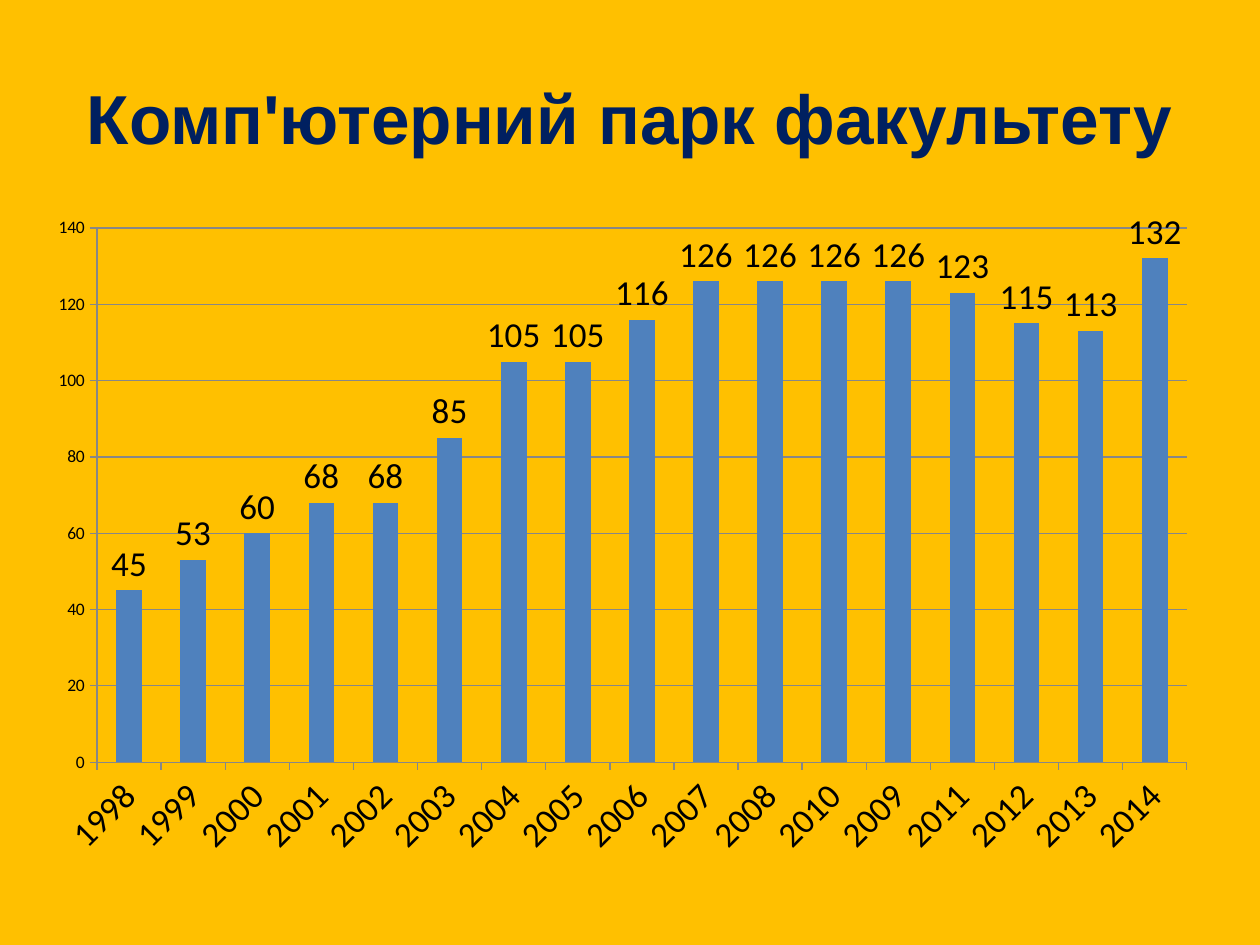
from typing import NamedTuple

from lxml import etree
from pptx import Presentation
from pptx.chart import data as chart_data
from pptx.dml.color import RGBColor
from pptx.enum import chart as chart_enum, text
from pptx.oxml import ns
from pptx.util import Inches, Pt

GOLD = RGBColor(0xFF, 0xC0, 0x00)
NAVY = RGBColor(0x00, 0x20, 0x60)
BLUE = RGBColor(0x4F, 0x81, 0xBD)
GRAY = RGBColor(0x87, 0x87, 0x87)
BLACK = RGBColor(0x00, 0x00, 0x00)


class Box(NamedTuple):
    left: int
    top: int
    width: int
    height: int


class YearCount(NamedTuple):
    year: str
    computers: int


TITLE_BOX = Box(Inches(0.5), Inches(0.3), Inches(9), Inches(1.25))
CHART_BOX = Box(Inches(0.28), Inches(1.62), Inches(9.33), Inches(5.28))
PLOT_BOX = Box(Inches(0.77), Inches(1.81), Inches(8.65), Inches(4.24))

COUNTS = [
    YearCount("1998", 45), YearCount("1999", 53), YearCount("2000", 60),
    YearCount("2001", 68), YearCount("2002", 68), YearCount("2003", 85),
    YearCount("2004", 105), YearCount("2005", 105), YearCount("2006", 116),
    YearCount("2007", 126), YearCount("2008", 126), YearCount("2010", 126),
    YearCount("2009", 126), YearCount("2011", 123), YearCount("2012", 115),
    YearCount("2013", 113), YearCount("2014", 132),
]


def add_title(slide, wording: str) -> None:
    frame = slide.shapes.add_textbox(*TITLE_BOX).text_frame
    frame.word_wrap = True
    frame.vertical_anchor = text.MSO_ANCHOR.MIDDLE
    paragraph = frame.paragraphs[0]
    paragraph.alignment = text.PP_ALIGN.CENTER
    run = paragraph.add_run()
    run.text = wording
    run.font.name = "Arial"
    run.font.size = Pt(39.6)
    run.font.bold = True
    run.font.color.rgb = NAVY


def set_plot_area(chart, outer: Box, inner: Box) -> None:
    """Place the inner plot area as fractions of the chart frame."""
    plot_area = chart.plots[0]._element.getparent()
    for old in plot_area.findall(ns.qn("c:layout")):
        plot_area.remove(old)
    layout = etree.Element(ns.qn("c:layout"))
    manual = etree.SubElement(layout, ns.qn("c:manualLayout"))
    settings = {
        "layoutTarget": "inner", "xMode": "edge", "yMode": "edge",
        "x": (inner.left - outer.left) / outer.width,
        "y": (inner.top - outer.top) / outer.height,
        "w": inner.width / outer.width,
        "h": inner.height / outer.height,
    }
    for name, value in settings.items():
        etree.SubElement(manual, ns.qn(f"c:{name}"), val=str(value))
    plot_area.insert(0, layout)


def add_count_chart(slide, counts: list[YearCount]) -> None:
    data = chart_data.CategoryChartData()
    data.categories = [count.year for count in counts]
    data.add_series("Series 1", [count.computers for count in counts])
    chart = slide.shapes.add_chart(
        chart_enum.XL_CHART_TYPE.COLUMN_CLUSTERED, *CHART_BOX, data
    ).chart
    chart.has_legend = False
    chart.has_title = False
    chart.font.name = "Calibri"
    chart.font.size = Pt(10)
    chart.font.color.rgb = BLACK
    set_plot_area(chart, CHART_BOX, PLOT_BOX)

    # Columns and their values
    plot = chart.plots[0]
    plot.gap_width = 150
    plot.vary_by_categories = False
    fill = plot.series[0].format.fill
    fill.solid()
    fill.fore_color.rgb = BLUE
    plot.has_data_labels = True
    labels = plot.data_labels
    labels.show_value = True
    labels.position = chart_enum.XL_LABEL_POSITION.OUTSIDE_END
    labels.font.size = Pt(20)
    labels.font.color.rgb = BLACK

    # Axes and gridlines
    years, amounts = chart.category_axis, chart.value_axis
    amounts.minimum_scale, amounts.maximum_scale, amounts.major_unit = 0, 140, 20
    amounts.has_major_gridlines = True
    for part in (years, amounts, amounts.major_gridlines):
        part.format.line.color.rgb = GRAY
        part.format.line.width = Pt(0.75)
    for axis in (years, amounts):
        axis.major_tick_mark = chart_enum.XL_TICK_MARK.OUTSIDE
    years.tick_labels.font.size = Pt(20)
    body = years._element.find(ns.qn("c:txPr")).find(ns.qn("a:bodyPr"))
    body.set("rot", str(-45 * 60000))


def main() -> None:
    presentation = Presentation()
    presentation.slide_width, presentation.slide_height = Inches(10), Inches(7.5)
    slide = presentation.slides.add_slide(presentation.slide_layouts[6])
    slide.background.fill.solid()
    slide.background.fill.fore_color.rgb = GOLD
    add_title(slide, "Комп'ютерний парк факультету")
    add_count_chart(slide, COUNTS)
    presentation.save("out.pptx")


if __name__ == "__main__":
    main()
